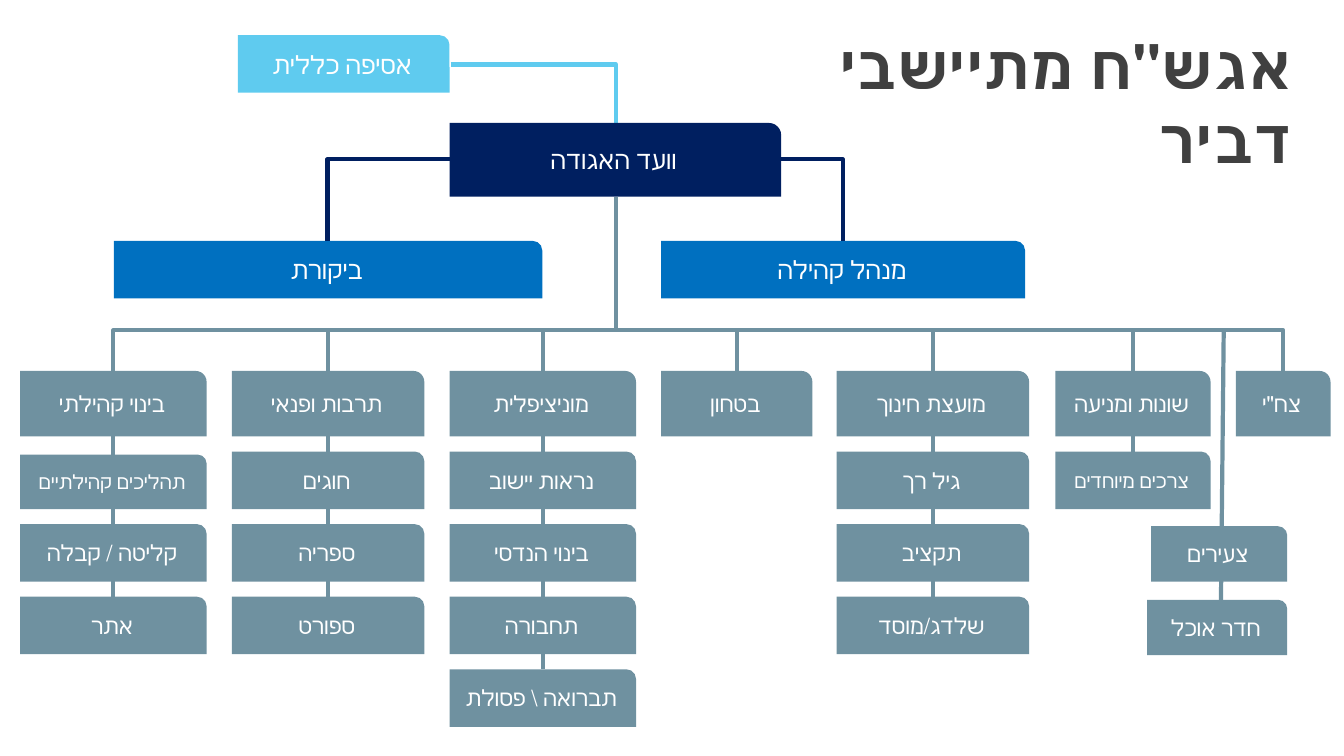
"""Build the organisation chart of the community association as one slide."""
import dataclasses
import typing

import lxml.etree
import pptx
import pptx.dml.color
import pptx.enum.shapes
import pptx.enum.text
import pptx.oxml.ns
import pptx.util

GRID = pptx.util.Inches(0.1)
SLIDE_COLUMNS, SLIDE_ROWS = 133.33, 75
HEAD_TOP, HEAD_HEIGHT = 36.8, 6.5
TEAM_TOP, TEAM_HEIGHT, TEAM_PITCH = 44.8, 5.7, 7.2
TRUNK_COLUMN, TRUNK_TOP, BUS_SHARE = 61.1, 19.5, 0.767
BOARD_MIDDLE, OFFICE_TOP = 15.8, 23.9

COLORS = {
    "assembly": "5FCBEF",
    "board": "001F60",
    "office": "0070C0",
    "branch": "6F91A0",
    "title": "404040",
    "label": "FFFFFF",
}
CONNECTORS = pptx.enum.shapes.MSO_CONNECTOR
ANCHORS = pptx.enum.text.MSO_ANCHOR
ALIGNMENTS = pptx.enum.text.PP_ALIGN
INSET = pptx.util.Inches(0.13)
BOX_FRAME = {
    "word_wrap": True,
    "vertical_anchor": ANCHORS.MIDDLE,
    "margin_left": INSET,
    "margin_right": INSET,
    "margin_top": INSET,
    "margin_bottom": INSET,
}
TITLE_FRAME = {
    "word_wrap": True,
    "vertical_anchor": ANCHORS.TOP,
    "margin_left": pptx.util.Inches(0.5),
    "auto_size": pptx.enum.text.MSO_AUTO_SIZE.SHAPE_TO_FIT_TEXT,
}


@dataclasses.dataclass
class Box:
    """A labelled box, placed in grid columns and rows."""

    text: str
    left: float
    top: float
    width: float
    height: float = TEAM_HEIGHT
    color: str = "branch"
    size: int = 16


@dataclasses.dataclass
class Branch:
    """A department and the teams stacked below it."""

    name: str
    left: float
    width: float
    teams: tuple[str, ...] = ()
    first_top: float = TEAM_TOP
    first_size: int = 16

    @property
    def middle(self) -> float:
        """Give the column of the branch's centre line."""
        return self.left + self.width / 2

    def boxes(self) -> typing.Iterator[Box]:
        """Yield the head box and then each team box."""
        yield Box(self.name, self.left, HEAD_TOP, self.width, HEAD_HEIGHT)
        for index, team in enumerate(self.teams):
            box = Box(team, self.left, TEAM_TOP + index * TEAM_PITCH, self.width)
            if index == 0:
                box.top, box.size = self.first_top, self.first_size
                box.height = TEAM_TOP + TEAM_HEIGHT - self.first_top
            yield box


BRANCHES = (
    Branch("בינוי קהילתי", 2, 18.5, ("תהליכים קהילתיים", "קליטה / קבלה", "אתר"), 45.1, 14),
    Branch("תרבות ופנאי", 23, 19.1, ("חוגים", "ספריה", "ספורט")),
    Branch("מוניציפלית", 44.6, 18.5,
           ("נראות יישוב", "בינוי הנדסי", "תחבורה", r"תברואה \ פסולת")),
    Branch("בטחון", 65.6, 15),
    Branch("מועצת חינוך", 83, 19.1, ("גיל רך", "תקציב", "שלדג/מוסד")),
    Branch("שונות ומניעה", 104.7, 15.4, ("צרכים מיוחדים",), first_size=14),
    Branch('צח"י', 122.6, 9.4),
)
BOXES = (
    Box("אסיפה כללית", 23.6, 3.5, 21, 5.7, "assembly", 18),
    Box("וועד האגודה", 44.6, 12.2, 32.9, 7.3, "board", 18),
    Box("ביקורת", 11.3, OFFICE_TOP, 42.5, 5.7, "office", 18),
    Box("מנהל קהילה", 65.6, OFFICE_TOP, 36.1, 5.7, "office", 18),
    Box("צעירים", 114.2, 52.2, 13.5, 5.5),
    Box("חדר אוכל", 113.8, 59.5, 13.9, 5.5),
)


def grid(*counts: float) -> list[int]:
    """Turn counts of columns or rows into lengths."""
    return [round(count * GRID) for count in counts]


def rgb(name: str) -> pptx.dml.color.RGBColor:
    """Look up a named colour."""
    return pptx.dml.color.RGBColor.from_string(COLORS[name])


def write_text(shape, text: str, frame_format: dict, align, font_format: dict, color: str) -> None:
    """Write one right-to-left paragraph into a shape."""
    frame = shape.text_frame
    for name, value in frame_format.items():
        setattr(frame, name, value)
    para = frame.paragraphs[0]
    para.alignment = align
    para._p.get_or_add_pPr().set("rtl", "1")
    span = para.add_run()
    span.text = text
    for name, value in font_format.items():
        setattr(span.font, name, value)
    span.font.color.rgb = rgb(color)


def draw_box(page, box: Box) -> None:
    """Draw a box with one rounded corner and its label."""
    shape = page.shapes.add_shape(
        pptx.enum.shapes.MSO_SHAPE.ROUND_1_RECTANGLE,
        *grid(box.left, box.top, box.width, box.height))
    shape.shadow.inherit = False
    shape.fill.solid()
    shape.fill.fore_color.rgb = rgb(box.color)
    shape.line.fill.background()
    font = {"name": "Roboto", "size": pptx.util.Pt(box.size)}
    write_text(shape, box.text, BOX_FRAME, ALIGNMENTS.CENTER, font, "label")


def draw_line(page, kind, ends: tuple[float, ...], color: str):
    """Draw a connector between two grid points."""
    line = page.shapes.add_connector(kind, *grid(*ends))
    line.line.color.rgb = rgb(color)
    line.line.width = pptx.util.Pt(3)
    lxml.etree.SubElement(line._element.spPr, pptx.oxml.ns.qn("a:effectLst"))
    return line


def draw_corner(page, ends: tuple[float, ...], color: str) -> None:
    """Draw a connector that runs across and then down."""
    line = draw_line(page, CONNECTORS.ELBOW, ends, color)
    line._element.spPr.find(pptx.oxml.ns.qn("a:prstGeom")).set("prst", "bentConnector2")


def draw_drop(page, column: float) -> None:
    """Draw the turned elbow from the board down to a branch."""
    middle_column = (TRUNK_COLUMN + column) / 2
    middle_row = (TRUNK_TOP + HEAD_TOP) / 2
    half_run = (HEAD_TOP - TRUNK_TOP) / 2
    half_rise = abs(column - TRUNK_COLUMN) / 2
    line = draw_line(page, CONNECTORS.ELBOW,
                     (middle_column - half_run, middle_row - half_rise,
                      middle_column + half_run, middle_row + half_rise), "branch")
    properties = line._element.spPr
    frame = properties.find(pptx.oxml.ns.qn("a:xfrm"))
    goes_right = column > TRUNK_COLUMN
    frame.set("rot", str((270 if goes_right else 90) * 60000))
    if goes_right:
        frame.set("flipH", "1")
    geometry = properties.find(pptx.oxml.ns.qn("a:prstGeom"))
    for old_list in geometry.findall(pptx.oxml.ns.qn("a:avLst")):
        geometry.remove(old_list)
    adjustments = lxml.etree.SubElement(geometry, pptx.oxml.ns.qn("a:avLst"))
    lxml.etree.SubElement(adjustments, pptx.oxml.ns.qn("a:gd"),
                          name="adj1", fmla=f"val {round(BUS_SHARE * 100000)}")


def main() -> None:
    """Build and save the deck."""
    deck = pptx.Presentation()
    deck.slide_width, deck.slide_height = grid(SLIDE_COLUMNS, SLIDE_ROWS)
    page = deck.slides.add_slide(deck.slide_layouts[6])
    draw_corner(page, (44.7, 6.4, TRUNK_COLUMN, 12.2), "assembly")
    for branch in BRANCHES:
        if branch.teams:
            last_top = TEAM_TOP + (len(branch.teams) - 1) * TEAM_PITCH
            draw_line(page, CONNECTORS.STRAIGHT,
                      (branch.middle, HEAD_TOP + HEAD_HEIGHT, branch.middle, last_top), "branch")
    draw_line(page, CONNECTORS.STRAIGHT, (121.4, 32.9, 121.1, 62.2), "branch")
    for box in BOXES:
        draw_box(page, box)
    for branch in BRANCHES:
        for box in branch.boxes():
            draw_box(page, box)
    for branch in BRANCHES:
        draw_drop(page, branch.middle)
    for start, end in ((44.6, 32.5), (77.5, 83.6)):
        draw_corner(page, (start, BOARD_MIDDLE, end, OFFICE_TOP), "board")
    title = page.shapes.add_textbox(*grid(68, 2.3, 61.2, 15.8))
    font = {"name": "Roboto", "size": pptx.util.Pt(44), "bold": True}
    write_text(title, 'אגש"ח מתיישבי דביר', TITLE_FRAME, ALIGNMENTS.RIGHT, font, "title")
    deck.save("out.pptx")


if __name__ == "__main__":
    main()
